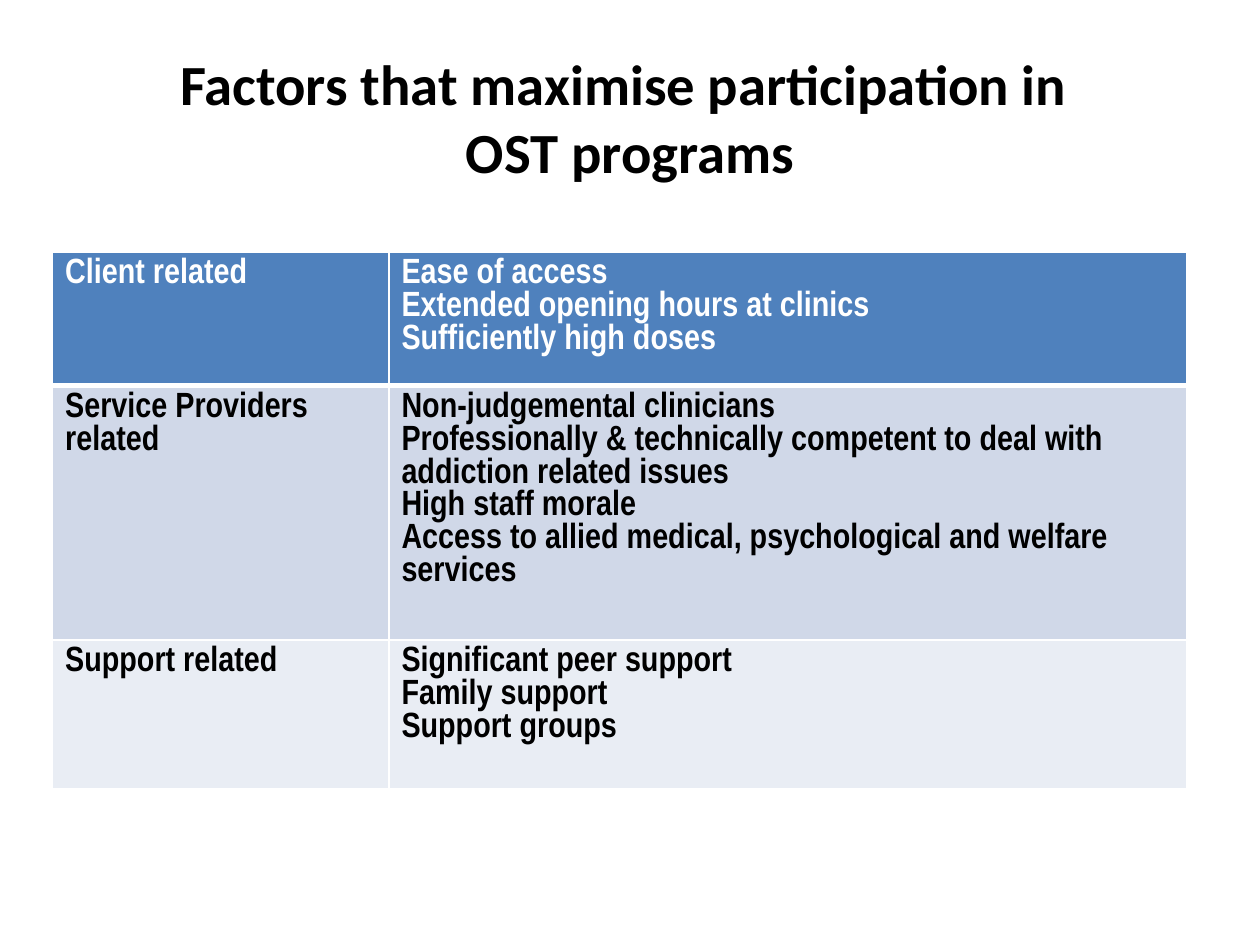
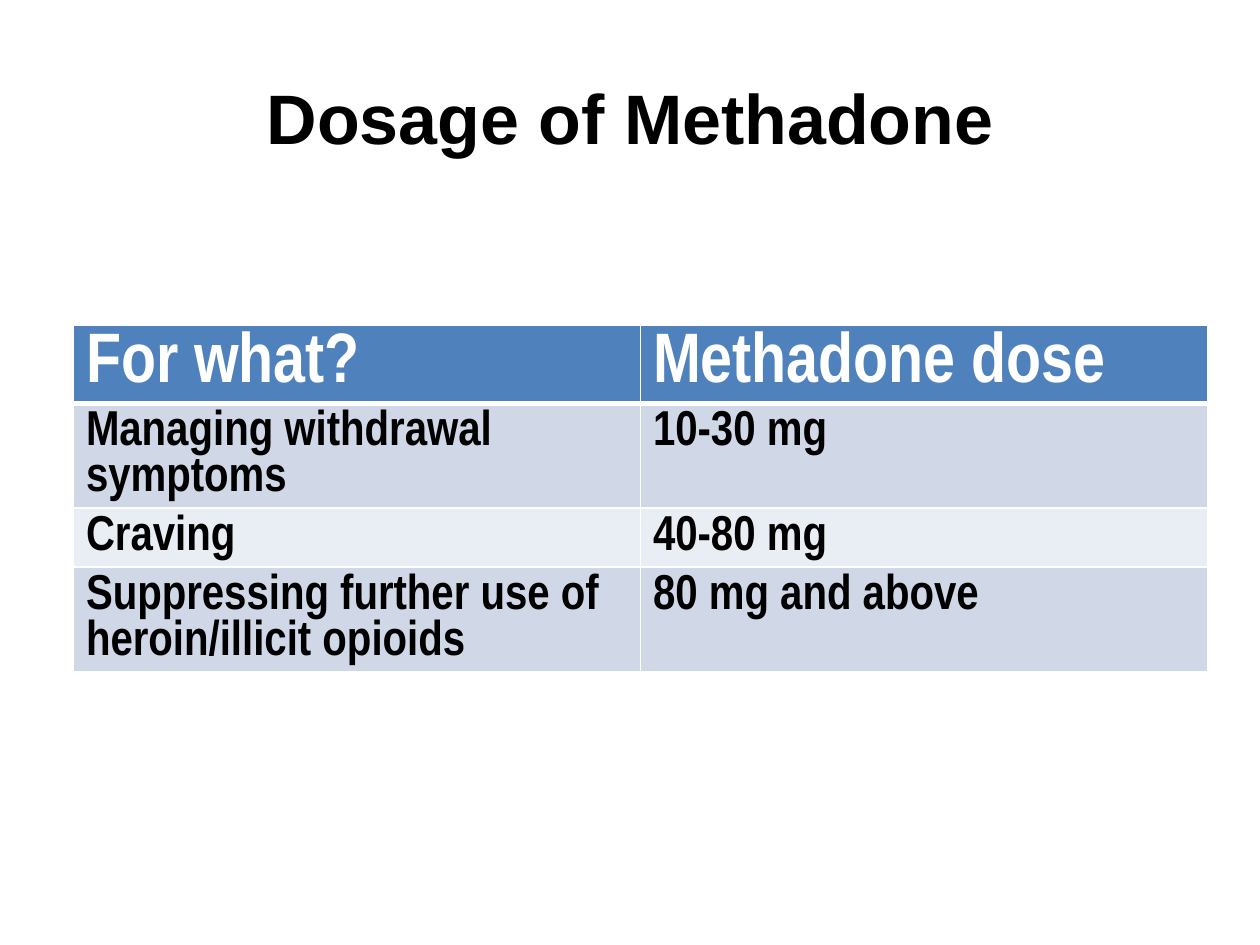
"""Build two slides on opioid substitution therapy, each a title over a table."""
from dataclasses import dataclass

from lxml import etree
from pptx import Presentation
from pptx import util as u
from pptx.dml import color
from pptx.enum import text
from pptx.oxml import ns

HUES = {"head": "4F81BD", "odd": "D0D8E8", "even": "E9EDF4", "ink": "000000", "white": "FFFFFF"}
WIDE = 22.86
THIN, THICK = 1, 3
PITCH = 0.94


@dataclass
class Title:
    words: str
    face: str
    size: float


@dataclass
class Grid:
    left: float
    top: float
    cols: list[float]
    rows: list[float]
    cells: list[tuple[str, str]]
    head: float
    body: float


PAGES = [
    (
        Title("Factors that maximise participation in \vOST programs", "Calibri", 32.4),
        Grid(1.06, 5.08, [6.78, 16.08], [2.69, 5.13, 3.0], [
            ("Client related",
             "Ease of access\nExtended opening hours at clinics\nSufficiently high doses"),
            ("Service Providers related",
             "Non-judgemental clinicians\n"
             "Professionally & technically competent to deal with addiction related issues\n"
             "High staff morale\n"
             "Access to allied medical, psychological and welfare services"),
            ("Support related",
             "Significant peer support\nFamily support\nSupport groups"),
        ], 20, 20),
    ),
    (
        Title("Dosage of Methadone", "Arial", 40),
        Grid(1.48, 6.55, [WIDE / 2] * 2, [1.55, 2.1, 1.18, 2.1], [
            ("For what?", "Methadone dose"),
            ("Managing withdrawal symptoms", "10-30 mg"),
            ("Craving", "40-80 mg"),
            ("Suppressing further use of heroin/illicit opioids", "80 mg and above"),
        ], 40, 28),
    ),
]


def tint(name: str) -> color.RGBColor:
    """Return a named colour."""
    return color.RGBColor.from_string(HUES[name])


def style(frame, face: str, size: float, hue: str) -> None:
    """Set one bold font on every paragraph."""
    for par in frame.paragraphs:
        font = par.font
        font.name, font.size, font.bold = face, u.Pt(size), True
        font.color.rgb = tint(hue)


def edge(cell, row: int) -> None:
    """Draw white borders, with a thick rule below the header."""
    widths = {"L": THIN, "R": THIN,
              "T": THICK if row == 1 else THIN,
              "B": THICK if row == 0 else THIN}
    props = cell._tc.get_or_add_tcPr()
    for spot, (side, width) in enumerate(widths.items()):
        line = etree.Element(ns.qn(f"a:ln{side}"), w=str(u.Pt(width)))
        fill = etree.SubElement(line, ns.qn("a:solidFill"))
        etree.SubElement(fill, ns.qn("a:srgbClr"), val=HUES["white"])
        props.insert(spot, line)


def add_title(slide, title: Title) -> None:
    """Place the centred title."""
    box = slide.shapes.add_textbox(u.Cm(1.27), u.Cm(0.76), u.Cm(WIDE), u.Cm(3.18))
    frame = box.text_frame
    frame.word_wrap = True
    frame.vertical_anchor = text.MSO_ANCHOR.MIDDLE
    frame.text = title.words
    frame.paragraphs[0].alignment = text.PP_ALIGN.CENTER
    style(frame, title.face, title.size, "ink")


def add_grid(slide, grid: Grid) -> None:
    """Place the table with its header and banded rows."""
    table = slide.shapes.add_table(
        len(grid.rows), len(grid.cols), u.Cm(grid.left), u.Cm(grid.top),
        u.Cm(WIDE), u.Cm(sum(grid.rows))).table
    for col, width in zip(table.columns, grid.cols):
        col.width = u.Cm(width)
    for row, height in enumerate(grid.rows):
        table.rows[row].height = u.Cm(height)
        band = "head" if row == 0 else "odd" if row % 2 else "even"
        size, hue = (grid.head, "white") if row == 0 else (grid.body, "ink")
        for cell, words in zip(table.rows[row].cells, grid.cells[row]):
            cell.text_frame.text = words
            style(cell.text_frame, "Arial Narrow", size, hue)
            for par in cell.text_frame.paragraphs:
                par.line_spacing = u.Pt(size * PITCH)
            cell.fill.solid()
            cell.fill.fore_color.rgb = tint(band)
            edge(cell, row)


def main() -> None:
    """Build and save the deck."""
    deck = Presentation()
    deck.slide_width, deck.slide_height = u.Cm(25.4), u.Cm(19.05)
    for title, grid in PAGES:
        slide = deck.slides.add_slide(deck.slide_layouts[6])
        add_title(slide, title)
        add_grid(slide, grid)
    deck.save("out.pptx")


if __name__ == "__main__":
    main()
